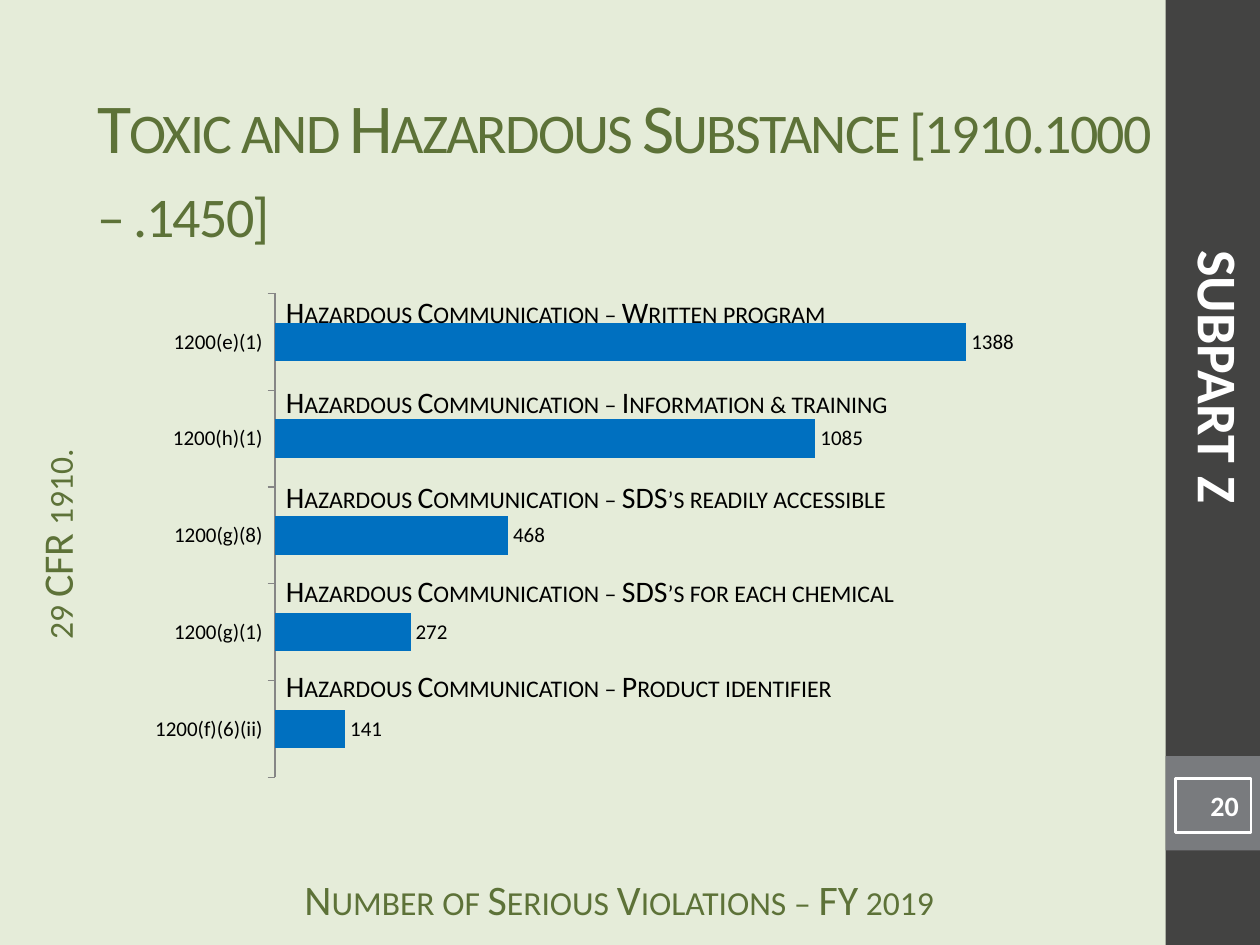
"""Build the Subpart Z slide with a bar chart of serious violations."""
from pptx import Presentation
from pptx.chart.data import CategoryChartData
from pptx.dml.color import RGBColor
from pptx.enum.chart import XL_CHART_TYPE, XL_LABEL_POSITION, XL_TICK_MARK
from pptx.enum.shapes import MSO_SHAPE
from pptx.enum.text import MSO_ANCHOR, MSO_AUTO_SIZE, PP_ALIGN
from pptx.util import Inches, Pt

COLORS = {name: RGBColor.from_string(value) for name, value in {
    "background": "E5ECD9", "sidebar": "434342", "badge": "797B7E",
    "heading": "5D7238", "bar": "0070C0", "axis": "868686",
    "black": "000000", "white": "FFFFFF"}.items()}


def write(shape, text, size, color, align=PP_ALIGN.LEFT, bold=False, caps=False,
          spacing=None, **frame_format):
    frame = shape.text_frame
    for key, value in frame_format.items():
        setattr(frame, key, value)
    paragraph = frame.paragraphs[0]
    paragraph.alignment = align
    run = paragraph.add_run()
    run.text = text
    font = {"name": "Calibri", "size": Pt(size), "bold": bold}
    for key, value in font.items():
        setattr(run.font, key, value)
    run.font.color.rgb = COLORS[color]
    properties = run.font._element
    if caps:
        properties.set("cap", "small")
    if spacing is not None:
        properties.set("spc", str(spacing * 100))


def add_panel(left, top, width, height, fill=None):
    panel = slide.shapes.add_shape(MSO_SHAPE.RECTANGLE, *map(Inches, (left, top, width, height)))
    panel.shadow.inherit = False
    if fill:
        panel.fill.solid()
        panel.fill.fore_color.rgb = COLORS[fill]
        panel.line.fill.background()
    else:
        panel.fill.background()
        panel.line.color.rgb = COLORS["white"]
        panel.line.width = Pt(1.5)
    return panel


presentation = Presentation()
presentation.slide_width, presentation.slide_height = Inches(10), Inches(7.5)
slide = presentation.slides.add_slide(presentation.slide_layouts[5])
slide.background.fill.solid()
slide.background.fill.fore_color.rgb = COLORS["background"]

add_panel(9.25, 0, 0.75, 7.5, "sidebar")
add_panel(9.25, 6, 0.75, 0.75, "badge")

title = slide.shapes.title
title_place = {"left": 0.67, "top": 0.58, "width": 8.56, "height": 1.5}
for side, length in title_place.items():
    setattr(title, side, Inches(length))
write(title, "Toxic and Hazardous Substance [1910.1000 – .1450]", 40, "heading",
      caps=True, spacing=-1, vertical_anchor=MSO_ANCHOR.MIDDLE,
      auto_size=MSO_AUTO_SIZE.NONE, word_wrap=True)

axis_captions = [
    ("Number of Serious Violations – FY 2019", (2.08, 6.93, 5.67, 0.33), 0),
    ("29 CFR 1910.", (-1.56, 4.03, 4.19, 0.58), 270),
]
for text, place, rotation in axis_captions:
    caption = slide.shapes.add_textbox(*map(Inches, place))
    caption.rotation = rotation
    write(caption, text, 24, "heading", PP_ALIGN.CENTER, caps=True,
          word_wrap=True, margin_top=0)

violations = CategoryChartData()
violations.categories = ["1200(f)(6)(ii)", "1200(g)(1)", "1200(g)(8)", "1200(h)(1)", "1200(e)(1)"]
violations.add_series("Series 1", [141, 272, 468, 1085, 1388])
chart = slide.shapes.add_chart(
    XL_CHART_TYPE.BAR_CLUSTERED, *map(Inches, (1.08, 2.25, 7.58, 4)), violations).chart
chart.has_legend = chart.has_title = False
chart.font.name = "Calibri"
chart.font.size = Pt(10)
chart.font.color.rgb = COLORS["black"]

sections = chart.category_axis
sections.major_tick_mark = XL_TICK_MARK.OUTSIDE
sections.tick_labels.font.size = Pt(12)
sections.format.line.color.rgb = COLORS["axis"]
counts = chart.value_axis
count_format = {"minimum_scale": 0, "maximum_scale": 1600,
                "has_major_gridlines": False, "visible": False}
for key, value in count_format.items():
    setattr(counts, key, value)

plot = chart.plots[0]
plot.gap_width = 150
plot.vary_by_categories = False
bars = plot.series[0]
bars.format.fill.solid()
bars.format.fill.fore_color.rgb = COLORS["bar"]
bar_values = bars.data_labels
bar_values.show_value = True
bar_values.position = XL_LABEL_POSITION.OUTSIDE_END
bar_values.font.size = Pt(12)

page_number = add_panel(9.33, 6.18, 0.6, 0.43)
write(page_number, "20", 16, "white", PP_ALIGN.RIGHT, bold=True,
      vertical_anchor=MSO_ANCHOR.MIDDLE)

bar_topics = [
    ("Written program", 2.28, 4.68),
    ("Information & training", 3, 5.12),
    ("SDS’s readily accessible", 3.75, 5.11),
    ("SDS’s for each chemical", 4.5, 5.18),
    ("Product identifier", 5.25, 4.65),
]
for topic, top, width in bar_topics:
    bar_topic = slide.shapes.add_textbox(*map(Inches, (2.17, top, width, 0.39)))
    write(bar_topic, f"Hazardous Communication – {topic}", 17, "black", caps=True,
          word_wrap=False, auto_size=MSO_AUTO_SIZE.SHAPE_TO_FIT_TEXT)

subpart = slide.shapes.add_textbox(*map(Inches, (6.69, 2.67, 5.98, 0.64)))
subpart.rotation = 90
write(subpart, "SUBPART Z", 32, "white", PP_ALIGN.CENTER, bold=True,
      word_wrap=True, auto_size=MSO_AUTO_SIZE.SHAPE_TO_FIT_TEXT)

presentation.save("out.pptx")
